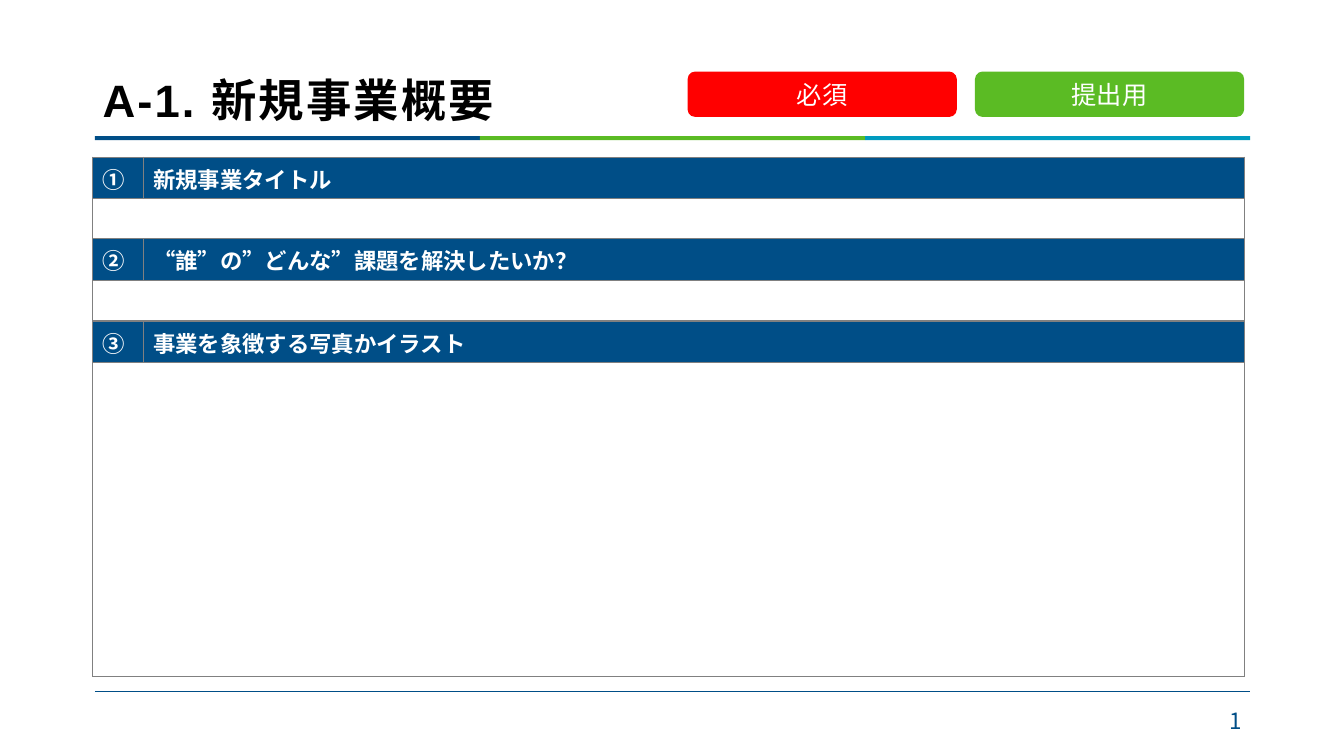
from dataclasses import dataclass

from lxml.etree import SubElement
from pptx import Presentation
from pptx.dml.color import RGBColor
from pptx.enum.shapes import MSO_CONNECTOR, MSO_SHAPE
from pptx.enum.text import MSO_ANCHOR, PP_ALIGN
from pptx.oxml import parse_xml
from pptx.oxml.ns import nsdecls, qn
from pptx.shapes.autoshape import Shape
from pptx.slide import Slide
from pptx.table import _Cell as Cell
from pptx.text.text import TextFrame
from pptx.util import Inches, Pt

COLORS = {
    "navy": "004E87",
    "green": "5BBB24",
    "cyan": "009BBF",
    "red": "FF0000",
    "white": "FFFFFF",
    "black": "000000",
    "border": "808080",
}
JAPANESE_FONT = "Noto Sans CJK JP"
RULE_LEFT, RULE_WIDTH = 0.94, 11.46
COLUMN_WIDTHS = (0.5, 10.92)
HEADER_HEIGHT = 0.41


@dataclass(frozen=True)
class Badge:
    text: str
    left: float
    color: str


@dataclass(frozen=True)
class Section:
    number: str
    heading: str
    top: float
    body_height: float


BADGES = (
    Badge("提出用", 9.67, "green"),
    Badge("必須", 6.82, "red"),
)
SECTIONS = (
    Section("①", "新規事業タイトル", 1.56, 0.4),
    Section("②", "“誰”の”どんな”課題を解決したいか？", 2.37, 0.4),
    Section("③", "事業を象徴する写真かイラスト", 3.19, 3.11),
)


def rgb(name: str) -> RGBColor:
    return RGBColor.from_string(COLORS[name])


def write_text(text_frame: TextFrame, text: str, size: float, color: str,
               bold: bool = False, font: str = JAPANESE_FONT,
               align: PP_ALIGN = PP_ALIGN.LEFT) -> None:
    text_frame.word_wrap = True
    paragraph = text_frame.paragraphs[0]
    paragraph.text = text
    paragraph.alignment = align
    run = paragraph.runs[0]
    run.font.size = Pt(size)
    run.font.bold = bold
    run.font.name = font
    run.font.color.rgb = rgb(color)
    SubElement(run.font._element, qn("a:ea")).set("typeface", JAPANESE_FONT)


def add_filled_shape(slide: Slide, kind: MSO_SHAPE, left: float, top: float,
                     width: float, height: float, color: str) -> Shape:
    shape = slide.shapes.add_shape(
        kind, Inches(left), Inches(top), Inches(width), Inches(height))
    shape.shadow.inherit = False
    shape.fill.solid()
    shape.fill.fore_color.rgb = rgb(color)
    shape.line.fill.background()
    return shape


def add_text_box(slide: Slide, left: float, top: float,
                 width: float, height: float) -> TextFrame:
    box = slide.shapes.add_textbox(
        Inches(left), Inches(top), Inches(width), Inches(height))
    box.text_frame.vertical_anchor = MSO_ANCHOR.MIDDLE
    return box.text_frame


def add_rules(slide: Slide) -> None:
    """Draw the three-colour rule under the title and the footer line."""
    band_width = RULE_WIDTH / 3
    for index, color in enumerate(("navy", "green", "cyan")):
        add_filled_shape(slide, MSO_SHAPE.RECTANGLE,
                         RULE_LEFT + index * band_width, 1.35,
                         band_width, 0.04, color)
    footer = slide.shapes.add_connector(
        MSO_CONNECTOR.STRAIGHT, Inches(RULE_LEFT), Inches(6.86),
        Inches(RULE_LEFT + RULE_WIDTH), Inches(6.86))
    footer.line.color.rgb = rgb("navy")
    footer.line.width = Pt(0.5)
    SubElement(footer._element.spPr, qn("a:effectLst"))


def add_title(slide: Slide) -> None:
    text_frame = add_text_box(slide, 0.92, 0.4, 11.5, 0.91)
    write_text(text_frame, "A-1. 新規事業概要", 32.4, "black", True, "Arial")
    paragraph = text_frame.paragraphs[0]
    paragraph.line_spacing = 1.5
    paragraph.runs[0].font._element.set("spc", "150")


def add_badge(slide: Slide, badge: Badge) -> None:
    shape = add_filled_shape(slide, MSO_SHAPE.ROUNDED_RECTANGLE,
                             badge.left, 0.71, 2.67, 0.45, badge.color)
    shape.text_frame.vertical_anchor = MSO_ANCHOR.MIDDLE
    write_text(shape.text_frame, badge.text, 18, "white",
               align=PP_ALIGN.CENTER)


def set_borders(cell: Cell) -> None:
    properties = cell._tc.get_or_add_tcPr()
    for index, side in enumerate(("lnL", "lnR", "lnT", "lnB")):
        properties.insert(index, parse_xml(
            f'<a:{side} {nsdecls("a")} w="{Pt(1)}"><a:solidFill>'
            f'<a:srgbClr val="{COLORS["border"]}"/></a:solidFill></a:{side}>'))


def add_section(slide: Slide, section: Section) -> None:
    """Add a numbered heading row over one merged, empty answer row."""
    row_heights = (HEADER_HEIGHT, section.body_height)
    table = slide.shapes.add_table(
        2, 2, Inches(0.92), Inches(section.top),
        Inches(sum(COLUMN_WIDTHS)), Inches(sum(row_heights))).table
    table.first_row = table.horz_banding = False
    for column, width in zip(table.columns, COLUMN_WIDTHS):
        column.width = Inches(width)
    for row, height in zip(table.rows, row_heights):
        row.height = Inches(height)
    for column, text in enumerate((section.number, section.heading)):
        header, answer = table.cell(0, column), table.cell(1, column)
        write_text(header.text_frame, text, 16, "white", True)
        header.fill.solid()
        header.fill.fore_color.rgb = rgb("navy")
        answer.fill.background()
        end_format = SubElement(answer.text_frame.paragraphs[0]._p,
                                qn("a:endParaRPr"))
        end_format.set("sz", "1400")
        set_borders(header)
        set_borders(answer)
    table.cell(1, 0).merge(table.cell(1, 1))


def main() -> None:
    presentation = Presentation()
    presentation.slide_width = Inches(13.33)
    presentation.slide_height = Inches(7.5)
    slide = presentation.slides.add_slide(presentation.slide_layouts[6])
    add_rules(slide)
    add_title(slide)
    page_number = add_text_box(slide, 9.42, 6.95, 3, 0.4)
    write_text(page_number, "1", 16, "navy", align=PP_ALIGN.RIGHT)
    for section in SECTIONS:
        add_section(slide, section)
    for badge in BADGES:
        add_badge(slide, badge)
    presentation.save("out.pptx")


if __name__ == "__main__":
    main()
